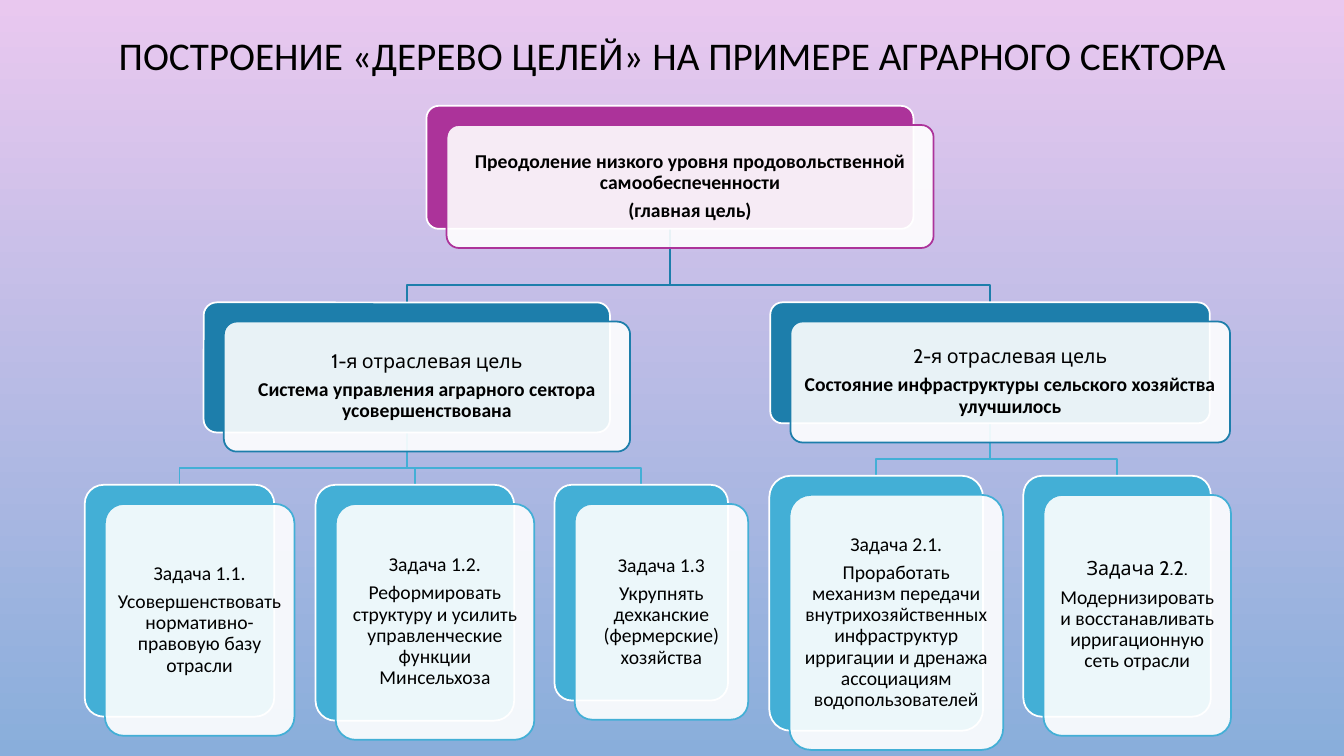
from dataclasses import dataclass

import pptx
import pptx.dml.color
import pptx.enum.shapes
import pptx.enum.text
import pptx.oxml
import pptx.oxml.ns
import pptx.util
from pptx.dml.color import RGBColor
from pptx.util import Inches

BLACK = RGBColor(0x00, 0x00, 0x00)
WHITE = RGBColor(0xFF, 0xFF, 0xFF)
PLUM = RGBColor(0xAC, 0x33, 0x9A)
BLUE = RGBColor(0x1D, 0x7E, 0xAB)
SKY = RGBColor(0x43, 0xAF, 0xD6)
PINK_TOP = RGBColor(0xE9, 0xC8, 0xEF)
BLUE_BOTTOM = RGBColor(0x89, 0xAE, 0xDB)

CARD_SHIFT_X = 0.2
CARD_SHIFT_Y = 0.19
BEND_ABOVE_CHILD = 0.17
TEXT_INSET = 0.06


@dataclass(frozen=True)
class Goal:
    left: float
    top: float
    width: float
    height: float
    color: RGBColor
    heading: str
    detail: str
    heading_font: str = "Calibri"
    heading_bold: bool = False
    detail_bold: bool = False
    children: tuple["Goal", ...] = ()

    @property
    def center(self) -> float:
        return self.left + self.width / 2

    @property
    def bottom(self) -> float:
        return self.top + self.height


SECTOR_1_TASKS = (
    Goal(0.84, 4.81, 1.88, 2.3, SKY, "Задача 1.1.",
         "Усовершенствовать нормативно-правовую базу отрасли"),
    Goal(3.13, 4.81, 1.97, 2.34, SKY, "Задача 1.2.",
         "Реформировать структуру и усилить управленческие функции Минсельхоза"),
    Goal(5.5, 4.81, 1.72, 2.14, SKY, "Задача 1.3",
         "Укрупнять дехканские (фермерские) хозяйства"),
)
SECTOR_2_TASKS = (
    Goal(7.63, 4.72, 2.12, 2.53, SKY, "Задача 2.1.",
         "Проработать механизм передачи внутрихозяйственных инфраструктур "
         "ирригации и дренажа ассоциациям водопользователей"),
    Goal(10.15, 4.72, 1.86, 2.39, SKY, "Задача 2.2.",
         "Модернизировать и восстанавливать ирригационную сеть отрасли",
         heading_font="Cabin"),
)
MAIN_GOAL = Goal(
    4.23, 1.05, 4.83, 1.22, PLUM,
    "Преодоление низкого уровня продовольственной самообеспеченности",
    "(главная цель)", heading_bold=True, detail_bold=True,
    children=(
        Goal(2.02, 3, 4.03, 1.29, BLUE, "1-я отраслевая цель",
             "Система управления аграрного сектора усовершенствована",
             heading_font="Cabin", detail_bold=True, children=SECTOR_1_TASKS),
        Goal(7.64, 3, 4.36, 1.2, BLUE, "2-я отраслевая цель",
             "Состояние инфраструктуры сельского хозяйства улучшилось",
             heading_font="Cabin", detail_bold=True, children=SECTOR_2_TASKS),
    ),
)


def write_text(paragraph, text: str, *, size: float = 14, font: str = "Calibri",
               bold: bool = False, space_after: float = 5) -> None:
    paragraph.alignment = pptx.enum.text.PP_ALIGN.CENTER
    paragraph.line_spacing = 0.9
    paragraph.space_after = pptx.util.Pt(space_after)
    run = paragraph.add_run()
    run.text = text
    run.font.size = pptx.util.Pt(size)
    run.font.name = font
    run.font.bold = bold
    run.font.color.rgb = BLACK


def prepare_frame(frame, inset: float) -> None:
    frame.word_wrap = True
    frame.vertical_anchor = pptx.enum.text.MSO_ANCHOR.MIDDLE
    frame.margin_left = frame.margin_right = Inches(inset)
    frame.margin_top = frame.margin_bottom = Inches(inset)


def draw_panel(slide, goal: Goal, shift_x: float, shift_y: float,
               fill: RGBColor, outline: RGBColor):
    panel = slide.shapes.add_shape(
        pptx.enum.shapes.MSO_SHAPE.ROUNDED_RECTANGLE,
        Inches(goal.left + shift_x), Inches(goal.top + shift_y),
        Inches(goal.width), Inches(goal.height))
    panel.adjustments[0] = 0.1
    panel.shadow.inherit = False
    panel.fill.solid()
    panel.fill.fore_color.rgb = fill
    panel.line.color.rgb = outline
    panel.line.width = pptx.util.Pt(1.25)
    return panel


def draw_goal(slide, goal: Goal) -> None:
    draw_panel(slide, goal, 0, 0, goal.color, WHITE)
    card = draw_panel(slide, goal, CARD_SHIFT_X, CARD_SHIFT_Y, WHITE, goal.color)
    card_color = card.fill._xPr.find(".//" + pptx.oxml.ns.qn("a:srgbClr"))
    card_color.append(pptx.oxml.parse_xml(
        f'<a:alpha {pptx.oxml.ns.nsdecls("a")} val="90000"/>'))
    frame = card.text_frame
    prepare_frame(frame, TEXT_INSET)
    write_text(frame.paragraphs[0], goal.heading,
               font=goal.heading_font, bold=goal.heading_bold)
    write_text(frame.add_paragraph(), goal.detail, bold=goal.detail_bold)
    for child in goal.children:
        draw_goal(slide, child)


def draw_branches(slide, parent: Goal) -> None:
    for child in parent.children:
        draw_branches(slide, child)
        bend = child.top - BEND_ABOVE_CHILD
        outline = slide.shapes.build_freeform(
            Inches(parent.center), Inches(parent.bottom))
        outline.add_line_segments(
            [(Inches(x), Inches(y)) for x, y in (
                (parent.center, bend), (child.center, bend),
                (child.center, child.top))],
            close=False)
        branch = outline.convert_to_shape()
        branch.shadow.inherit = False
        branch.fill.background()
        branch.line.color.rgb = child.color
        branch.line.width = pptx.util.Pt(1.25)


def paint_background(slide) -> None:
    fill = slide.background.fill
    fill.gradient()
    fill.gradient_angle = 270
    for stop, color in zip(fill.gradient_stops, (PINK_TOP, BLUE_BOTTOM)):
        stop.color.rgb = color


def main() -> None:
    presentation = pptx.Presentation()
    presentation.slide_width = Inches(13.33)
    presentation.slide_height = Inches(7.5)
    slide = presentation.slides.add_slide(presentation.slide_layouts[6])
    paint_background(slide)

    title = slide.shapes.add_textbox(
        Inches(1), Inches(0.26), Inches(11.33), Inches(0.63))
    prepare_frame(title.text_frame, 0.05)
    write_text(title.text_frame.paragraphs[0],
               "ПОСТРОЕНИЕ «ДЕРЕВО ЦЕЛЕЙ» НА ПРИМЕРЕ АГРАРНОГО СЕКТОРА",
               size=28, space_after=0)

    draw_branches(slide, MAIN_GOAL)
    draw_goal(slide, MAIN_GOAL)
    presentation.save("out.pptx")


if __name__ == "__main__":
    main()
